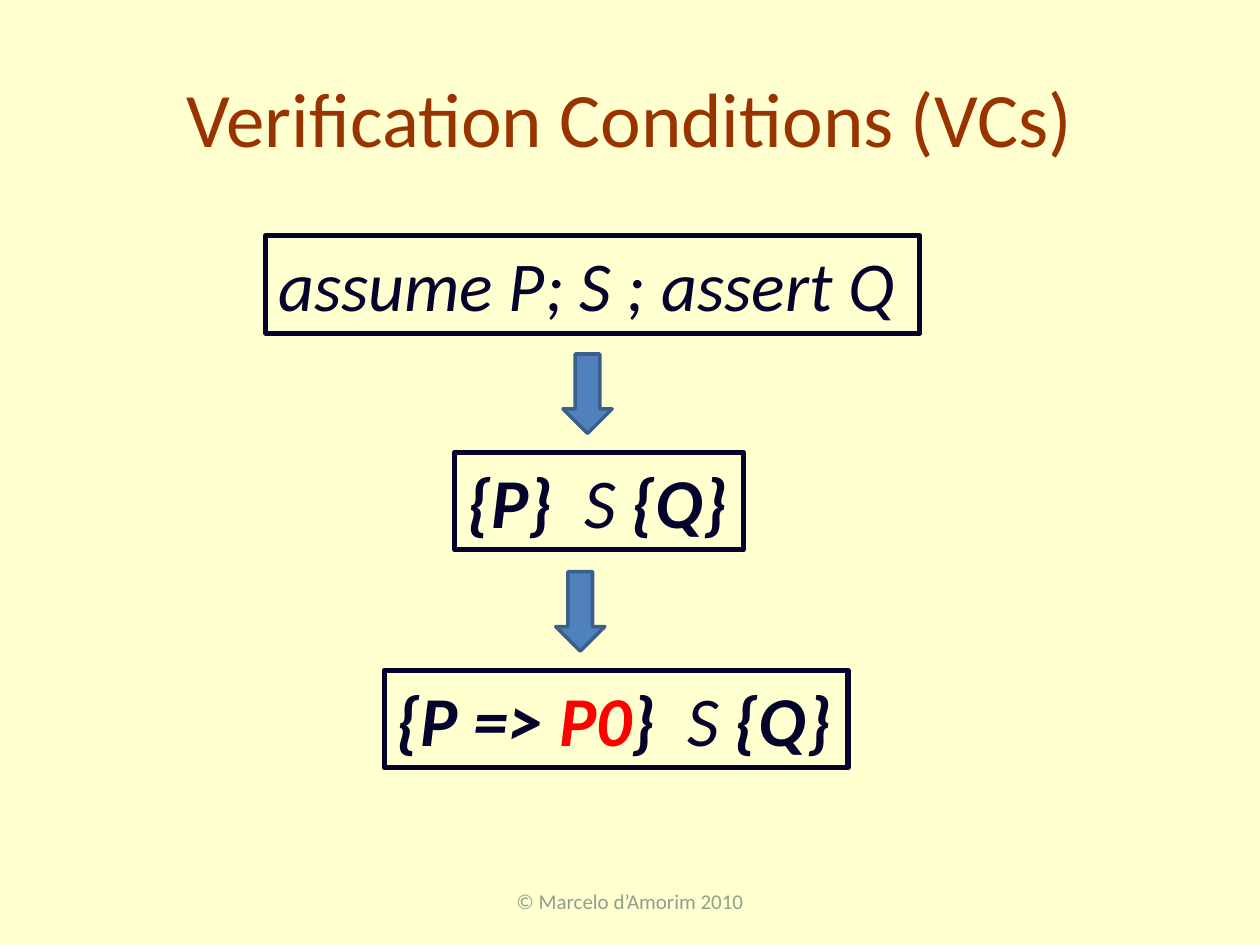
from dataclasses import dataclass

from pptx import Presentation
from pptx.dml.color import RGBColor
from pptx.enum.shapes import MSO_SHAPE as SHAPE
from pptx.enum.text import MSO_ANCHOR as ANCHOR, MSO_AUTO_SIZE as AUTO, PP_ALIGN as ALIGN
from pptx.util import Pt


@dataclass(frozen=True)
class Theme:
    font: str = "Calibri"
    background: str = "FFFFD0"
    title: str = "993300"
    footer: str = "90A08C"
    ink: str = "05022C"
    accent: str = "FF0000"
    arrow_fill: str = "4F81BD"
    arrow_line: str = "3A5F8C"
    title_size: int = 44
    formula_size: int = 40
    footer_size: int = 12


def rgb(value):
    return RGBColor.from_string(value)


class SlideBuilder:
    def __init__(self, slide, theme):
        self.s = slide
        self.theme = theme
        fill = slide.background.fill
        fill.solid()
        fill.fore_color.rgb = rgb(theme.background)

    def style_font(self, font, size, color):
        font.name = self.theme.font
        font.size = Pt(size)
        font.color.rgb = rgb(color)

    def shape(self, kind, left, top, width, height, line, weight, fill=None):
        sp = self.s.shapes.add_shape(kind, Pt(left), Pt(top), Pt(width), Pt(height))
        sp.shadow.inherit = False
        sp.line.color.rgb = rgb(line)
        sp.line.width = Pt(weight)
        if fill:
            sp.fill.solid()
            sp.fill.fore_color.rgb = rgb(fill)
        else:
            sp.fill.background()
        return sp

    def label(self, text, left, top, width, height, size, color):
        """Add centred text without a frame."""
        sp = self.s.shapes.add_textbox(Pt(left), Pt(top), Pt(width), Pt(height))
        tf = sp.text_frame
        tf.word_wrap = True
        tf.vertical_anchor = ANCHOR.MIDDLE
        p = tf.paragraphs[0]
        p.text = text
        p.alignment = ALIGN.CENTER
        self.style_font(p.font, size, color)

    def formula(self, runs, left, top, width):
        """Add a framed formula from (text, bold, color) runs."""
        t = self.theme
        sp = self.shape(SHAPE.RECTANGLE, left, top, width, 55.7, t.ink, 3)
        tf = sp.text_frame
        tf.word_wrap = False
        tf.auto_size = AUTO.SHAPE_TO_FIT_TEXT
        tf.vertical_anchor = ANCHOR.TOP
        p = tf.paragraphs[0]
        p.alignment = ALIGN.LEFT
        self.style_font(p.font, t.formula_size, t.ink)
        p.font.italic = True
        for text, bold, color in runs:
            r = p.add_run()
            r.text = text
            r.font.bold = bold
            r.font.color.rgb = rgb(color)

    def down_arrow(self, left, top):
        t = self.theme
        self.shape(SHAPE.DOWN_ARROW, left, top, 28.1, 45.4, t.arrow_line, 2, t.arrow_fill)


def main():
    theme = Theme()
    prs = Presentation()
    prs.slide_width, prs.slide_height = Pt(720), Pt(540)
    b = SlideBuilder(prs.slides.add_slide(prs.slide_layouts[6]), theme)

    b.label("Verification Conditions (VCs)", 36, 21.6, 648, 90, theme.title_size, theme.title)
    b.label("© Marcelo d’Amorim 2010", 246, 500.5, 228, 28.75, theme.footer_size, theme.footer)

    ink = theme.ink
    statement = [("S ", False, ink), ("{Q}", True, ink)]
    b.formula([("assume P; S ; assert Q", False, ink)], 151.9, 134.7, 373.7)
    b.down_arrow(321.7, 202.3)
    b.formula([("{P}  ", True, ink), *statement], 259.9, 258.5, 164.9)
    b.down_arrow(317.5, 326.7)
    b.formula(
        [("{P => ", True, ink), ("P0", True, theme.accent), ("}  ", True, ink), *statement],
        219.6, 383, 265,
    )
    prs.save("out.pptx")


if __name__ == "__main__":
    main()
